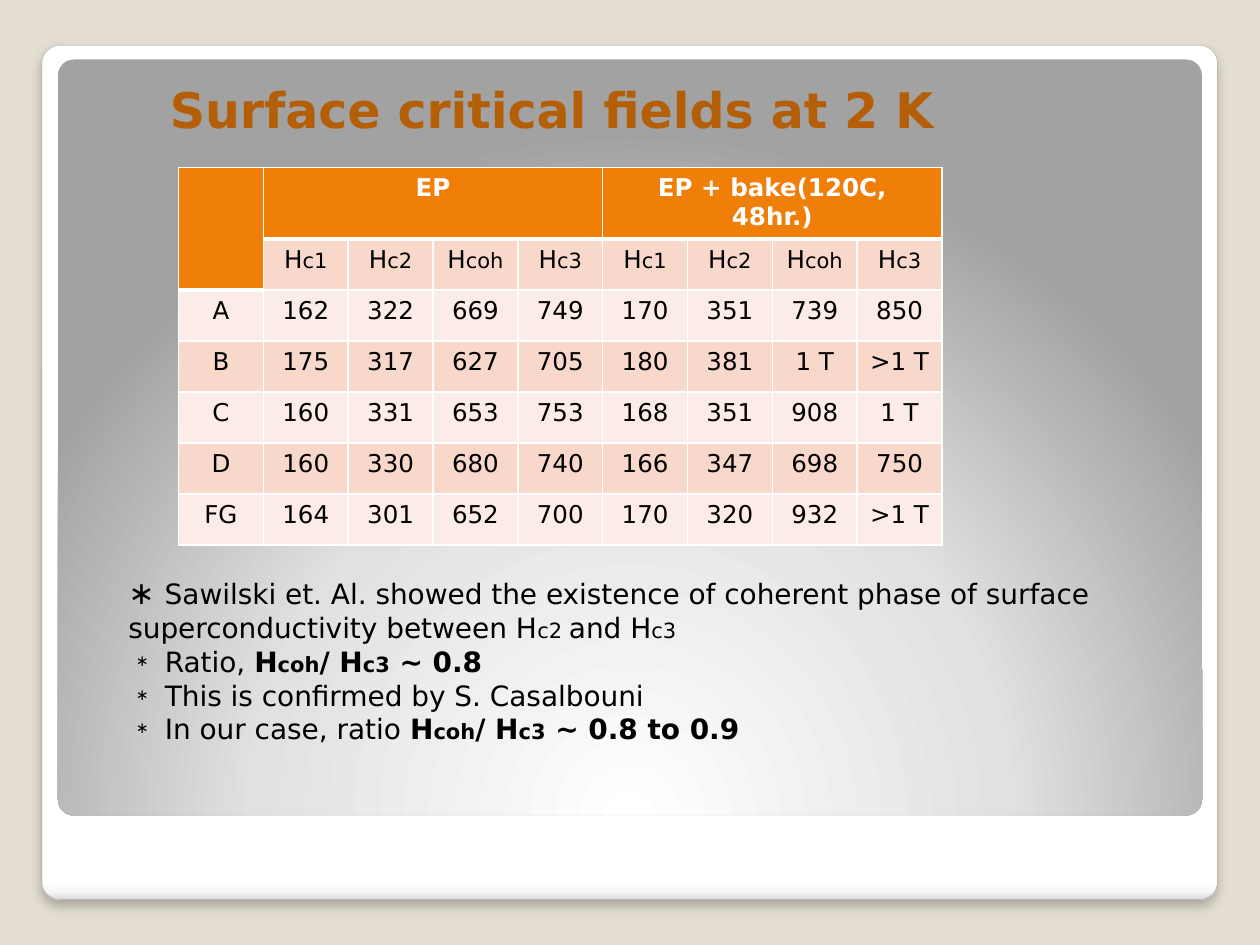
from lxml.etree import SubElement
from pptx import Presentation
from pptx.dml.color import RGBColor
from pptx.enum.shapes import MSO_SHAPE
from pptx.enum.text import MSO_ANCHOR, MSO_AUTO_SIZE, PP_ALIGN
from pptx.oxml import parse_xml
from pptx.oxml.ns import nsdecls, qn
from pptx.util import Inches, Pt

rgb = RGBColor.from_string
FONT = "DejaVu Sans"
ORANGE, BANDS = "F07F09", ("F9D8CC", "FCECE7")


def at(*shares):
    """Turn percentages of the slide's width and height, in turn, into lengths."""
    sides = (prs.slide_width, prs.slide_height) * 2
    return [int(side * share / 100) for side, share in zip(sides, shares)]


def write(p, runs, color="000000"):
    """Add (text, size, bold) runs to a paragraph."""
    for text, size, bold in runs:
        r = p.add_run()
        r.text = text
        for name, value in {"name": FONT, "size": Pt(size), "bold": bold}.items():
            setattr(r.font, name, value)
        r.font.color.rgb = rgb(color)


prs = Presentation()
prs.slide_width, prs.slide_height = Inches(10), Inches(7.5)
s = prs.slides.add_slide(prs.slide_layouts[6])
s.background.fill.solid()
s.background.fill.fore_color.rgb = rgb("E3DED1")

# White card and the grey panel on it
linear = '<a:lin ang="5400000" scaled="0"/>'
radial = ('<a:path path="circle"><a:fillToRect l="50000" t="175000" '
          'r="50000" b="-75000"/></a:path>')
panels = [
    ((3.33, 4.8, 93.3, 90.4), linear,
     [(0, "FFFFFF"), (98, "FFFFFF"), (99, "F7F7F7"), (100, "DADADA")]),
    ((4.6, 6.3, 90.8, 80), radial,
     [(0, "FFFFFF"), (55, "E1E1E1"), (100, "A2A2A2")]),
]
cards = []
for place, direction, stops in panels:
    sp = s.shapes.add_shape(MSO_SHAPE.ROUNDED_RECTANGLE, *at(*place))
    sp.adjustments[0] = 0.021
    sp.shadow.inherit = False
    sp.line.fill.background()
    stop_xml = "".join(f'<a:gs pos="{pos * 1000}"><a:srgbClr val="{color}"/></a:gs>'
                       for pos, color in stops)
    sp.element.spPr.find(qn("a:prstGeom")).addnext(parse_xml(
        f'<a:gradFill {nsdecls("a")} rotWithShape="1"><a:gsLst>{stop_xml}</a:gsLst>'
        f'{direction}</a:gradFill>'))
    cards.append(sp)

card = cards[0]
card.line.color.rgb = rgb("A4A4A4")
card.line.width = Pt(0.16)
card.element.spPr.find(qn("a:effectLst")).append(parse_xml(
    f'<a:outerShdw {nsdecls("a")} blurRad="{Pt(6)}" dist="{Pt(4)}" dir="5400000" '
    'algn="tl" rotWithShape="0"><a:srgbClr val="000000"><a:alpha val="25000"/>'
    '</a:srgbClr></a:outerShdw>'))

# Title
tf = s.shapes.add_textbox(*at(12.5, 7.73, 64.2, 7.6)).text_frame
tf.word_wrap = True
tf.vertical_anchor = MSO_ANCHOR.BOTTOM
write(tf.paragraphs[0], [("Surface critical fields at 2 K", 28, True)], "B45F07")

# Table of critical fields
fields = ["c1", "c2", "coh", "c3"] * 2
samples = [
    ["A", "162", "322", "669", "749", "170", "351", "739", "850"],
    ["B", "175", "317", "627", "705", "180", "381", "1 T", ">1 T"],
    ["C", "160", "331", "653", "753", "168", "351", "908", "1 T"],
    ["D", "160", "330", "680", "740", "166", "347", "698", "750"],
    ["FG", "164", "301", "652", "700", "170", "320", "932", ">1 T"],
]
grid = [
    [[], [("EP", 14, True)], [], [], [], [("EP + bake(120C, 48hr.)", 14, True)], [], [], []],
    [[]] + [[("H", 14, False), (field, 12, False)] for field in fields],
] + [[[(value, 14, False)] for value in sample] for sample in samples]

table = s.shapes.add_table(7, 9, *at(14.17, 17.73, 60.6, 39.87)).table
for column in table.columns:
    column.width = at(60.6 / 9)[0]
for i, row in enumerate(table.rows):
    row.height = at(0, 5.4 if i else 7.47)[1]

for i, row in enumerate(grid):
    for j, runs in enumerate(row):
        cell = table.cell(i, j)
        header = i == 0 or (i, j) == (1, 0)
        p = cell.text_frame.paragraphs[0]
        p.alignment = PP_ALIGN.CENTER
        write(p, runs, "FFFFFF" if header else "000000")
        tcPr = cell._tc.get_or_add_tcPr()
        for side in ("lnL", "lnR", "lnT", "lnB"):
            width = 3 if header and side == "lnB" else 1
            ln = SubElement(tcPr, qn(f"a:{side}"), w=str(Pt(width)))
            SubElement(SubElement(ln, qn("a:solidFill")), qn("a:srgbClr"), val="FFFFFF")
        cell.fill.solid()
        cell.fill.fore_color.rgb = rgb(ORANGE if header else BANDS[(i + 1) % 2])

table.cell(0, 0).merge(table.cell(1, 0))
for j in (1, 5):
    table.cell(0, j).merge(table.cell(0, j + 3))

# Remarks below the table
ratio = [("H", 16, True), ("coh", 12, True), ("/ H", 16, True), ("c3", 12, True)]
remarks = [
    [("∗ ", 18, False),
     ("Sawilski et. Al. showed the existence of coherent phase of surface "
      "superconductivity between H", 16, False),
     ("c2 ", 12, False), ("and H", 16, False), ("c3", 12, False)],
    [(" Ratio, ", 16, False), *ratio, (" ~ 0.8", 16, True)],
    [(" This is confirmed by S. Casalbouni", 16, False)],
    [(" In our case, ratio ", 16, False), *ratio, (" ~ 0.8 to 0.9", 16, True)],
]
tf = s.shapes.add_textbox(*at(9.2, 60, 79.2, 19.73)).text_frame
tf.word_wrap = True
tf.auto_size = MSO_AUTO_SIZE.SHAPE_TO_FIT_TEXT
for i, runs in enumerate(remarks):
    p = tf.add_paragraph() if i else tf.paragraphs[0]
    write(p, runs)
    if i:
        pPr = p._p.get_or_add_pPr()
        pPr.set("marL", str(Inches(0.22)))
        pPr.set("indent", str(-Inches(0.16)))
        SubElement(pPr, qn("a:buSzPct"), val="55000")
        SubElement(pPr, qn("a:buFont"), typeface=FONT)
        SubElement(pPr, qn("a:buChar"), char="∗")

prs.save("out.pptx")
